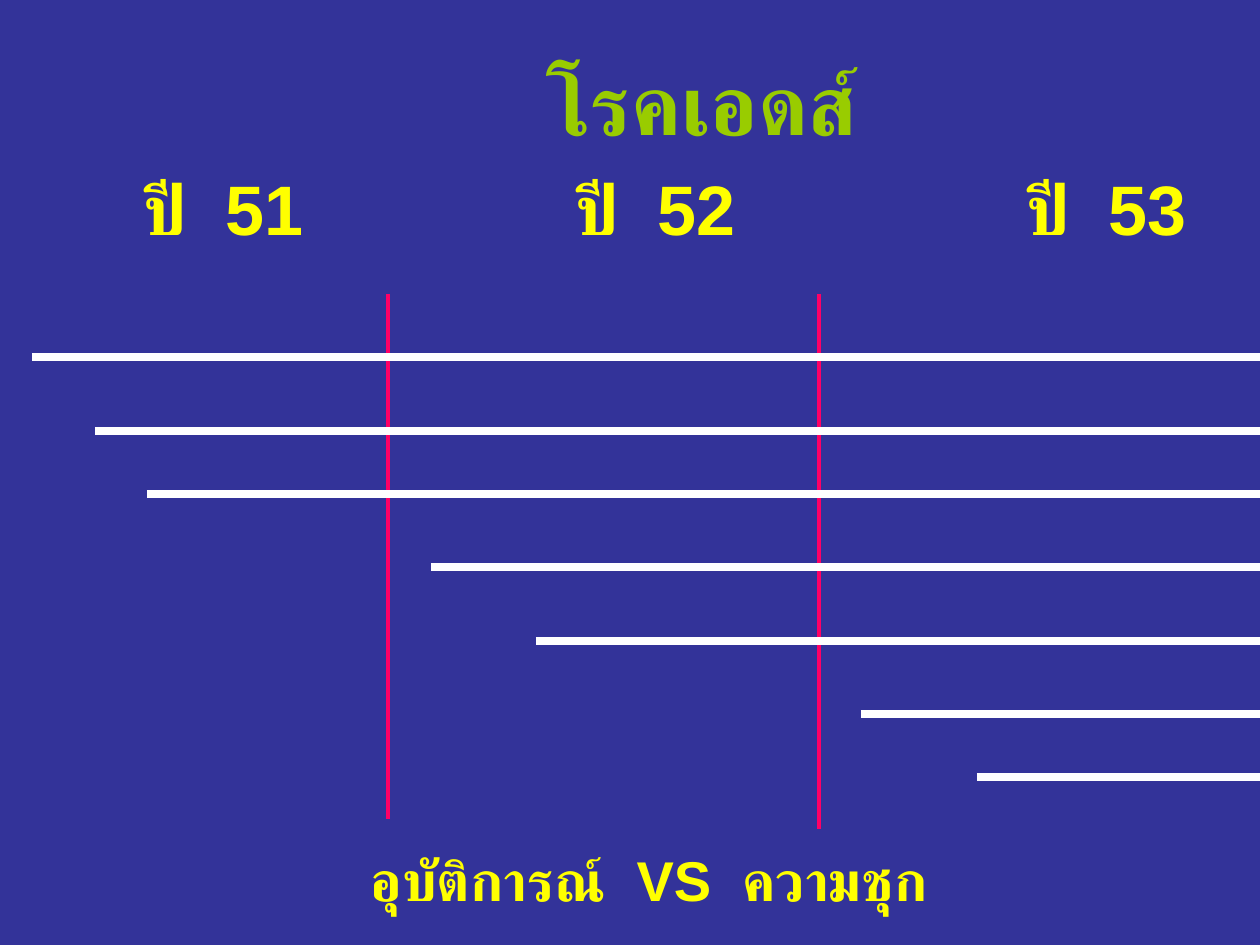
from dataclasses import dataclass

import lxml.etree
import pptx
import pptx.dml.color
import pptx.enum.shapes
import pptx.enum.text
import pptx.oxml.ns
import pptx.util

EMU_PER_PX = 914400 // 126
CENTER = pptx.enum.text.PP_ALIGN.CENTER
LEFT = pptx.enum.text.PP_ALIGN.LEFT


@dataclass
class Rule:
    x1: int
    y1: int
    x2: int
    y2: int
    color: str
    points: float


@dataclass
class Line:
    text: str
    size: int
    color: str
    align: int
    space_before: float
    margin: int = 0
    tabs: tuple = ()


def px(length: int) -> int:
    return pptx.util.Emu(length * EMU_PER_PX)


def rgb(color: str) -> pptx.dml.color.RGBColor:
    return pptx.dml.color.RGBColor.from_string(color)


def draw_rule(page, rule: Rule) -> None:
    line = page.shapes.add_connector(
        pptx.enum.shapes.MSO_CONNECTOR.STRAIGHT,
        px(rule.x1), px(rule.y1), px(rule.x2), px(rule.y2))
    line.line.color.rgb = rgb(rule.color)
    line.line.width = pptx.util.Pt(rule.points)
    lxml.etree.SubElement(line._element.spPr, pptx.oxml.ns.qn("a:effectLst"))


def draw_text(page, left: int, top: int, width: int, height: int, lines: list[Line]) -> None:
    box = page.shapes.add_textbox(px(left), px(top), px(width), px(height))
    frame = box.text_frame
    frame.word_wrap = True
    frame.text = "\n".join(line.text for line in lines)
    for para, line in zip(frame.paragraphs, lines):
        para.alignment = line.align
        para.space_before = pptx.util.Pt(line.space_before)
        properties = para._p.get_or_add_pPr()
        properties.set("marL", str(px(line.margin)))
        if line.tabs:
            tab_list = lxml.etree.SubElement(properties, pptx.oxml.ns.qn("a:tabLst"))
            for stop in line.tabs:
                tab = lxml.etree.SubElement(tab_list, pptx.oxml.ns.qn("a:tab"))
                tab.set("pos", str(px(stop)))
                tab.set("algn", "l")
        for span in para.runs:
            span.font.name = "Arial"
            span.font.size = pptx.util.Pt(line.size)
            span.font.bold = True
            span.font.color.rgb = rgb(line.color)


def main() -> None:
    deck = pptx.Presentation()
    deck.slide_width, deck.slide_height = px(1260), px(945)
    page = deck.slides.add_slide(deck.slide_layouts[6])
    page.background.fill.solid()
    page.background.fill.fore_color.rgb = rgb("333399")

    # Disease name and year headings
    draw_text(page, 0, 45, 1285, 845, [
        Line("โรคเอดส์", 48, "99CC00", CENTER, 9.6, margin=118),
        Line("\tปี  51\tปี  52\tปี  53", 40, "FFFF00", LEFT, 8, tabs=(131, 563, 1014)),
    ])

    # Year boundaries
    for x, bottom in ((388, 819), (819, 829)):
        draw_rule(page, Rule(x, 294, x, bottom, "FF0066", 2.25))

    # Duration of each case, running on past the right edge
    cases = ((32, 357, 1292), (95, 431, 1355), (147, 494, 1407), (431, 567, 1407),
             (536, 641, 1396), (861, 714, 1428), (977, 777, 1544))
    for start, y, end in cases:
        draw_rule(page, Rule(start, y, end, y, "FFFFFF", 4.5))

    # Caption
    draw_text(page, 123, 839, 1052, 79, [
        Line("อุบัติการณ์  VS  ความชุก", 32, "FFFF00", CENTER, 16),
    ])

    deck.save("out.pptx")


if __name__ == "__main__":
    main()
